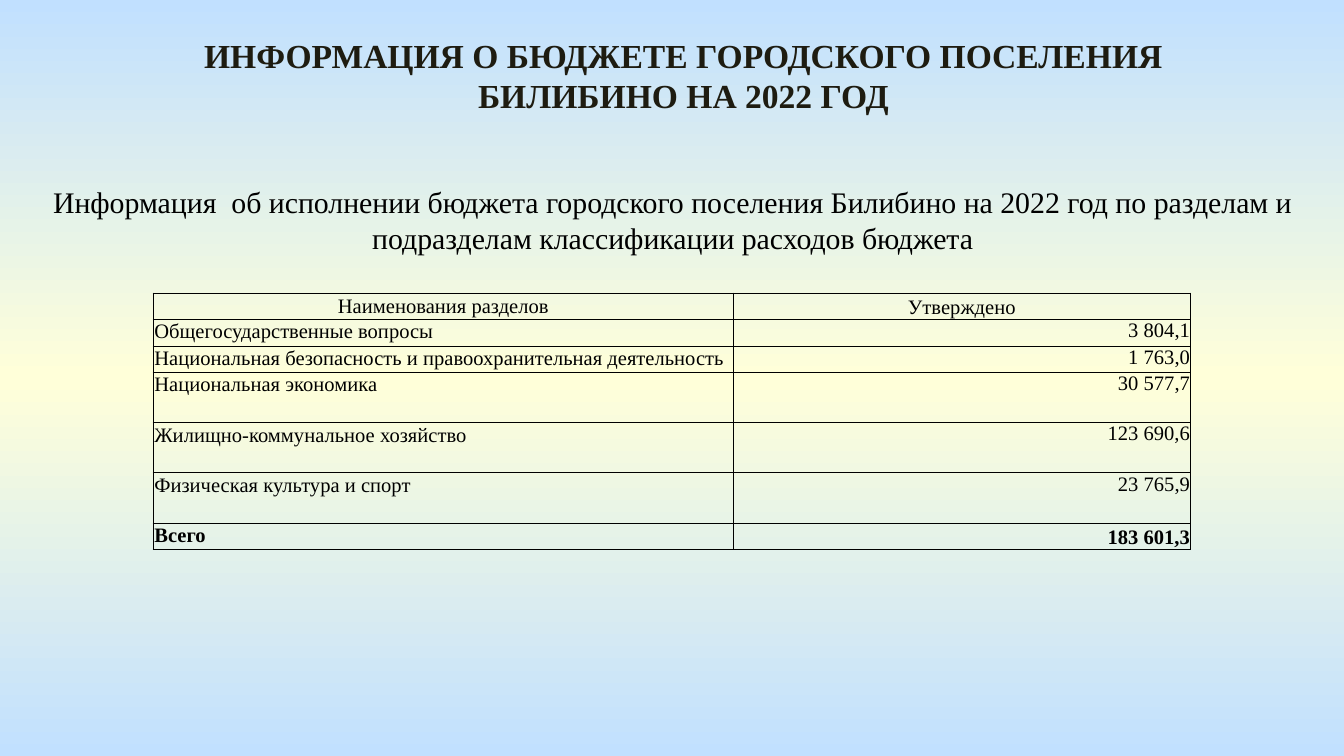
from copy import deepcopy

from lxml.etree import SubElement
from pptx import Presentation
from pptx.dml.color import RGBColor
from pptx.enum.text import MSO_ANCHOR, MSO_AUTO_SIZE, PP_ALIGN
from pptx.oxml.ns import qn
from pptx.util import Pt

COLORS = {
    "sky": "C1E0FF",
    "cream": "FFFFD9",
    "title": "1E1C11",
    "text": "000000",
    "border": "000000",
}
FONT = "Times New Roman"
TITLE = "ИНФОРМАЦИЯ О БЮДЖЕТЕ ГОРОДСКОГО ПОСЕЛЕНИЯ БИЛИБИНО НА 2022 ГОД"
SUBTITLE = (
    "Информация  об исполнении бюджета городского поселения Билибино на 2022 год "
    "по разделам и подразделам классификации расходов бюджета"
)
BUDGET_ROWS = [
    ("Наименования разделов", "Утверждено", 14),
    ("Общегосударственные вопросы", "3 804,1", 14.4),
    ("Национальная безопасность и правоохранительная деятельность", "1 763,0", 13.5),
    ("Национальная экономика", "30 577,7", 27),
    ("Жилищно-коммунальное хозяйство", "123 690,6", 27),
    ("Физическая культура и спорт", "23 765,9", 27),
    ("Всего", "183 601,3", 14),
]
NAME_SHARE = 0.56


def write_text(text_frame, text, size, color="text", bold=False, align=PP_ALIGN.CENTER):
    """Write one formatted paragraph into a text frame."""
    paragraph = text_frame.paragraphs[0]
    paragraph.alignment = align
    run = paragraph.add_run()
    run.text = text
    run.font.name = FONT
    run.font.size = Pt(size)
    run.font.bold = bold
    run.font.color.rgb = RGBColor.from_string(COLORS[color])


def paint_background(slide):
    """Fill the slide with a vertical sky, cream, sky gradient."""
    fill = slide.background.fill
    fill.gradient()
    fill.gradient_angle = 90
    stop_list = slide.element.find(".//" + qn("a:gsLst"))
    stop_list.insert(1, deepcopy(stop_list[0]))
    for stop, position, color in zip(fill.gradient_stops, (0, 0.5, 1), ("sky", "cream", "sky")):
        stop.position = position
        stop.color.rgb = RGBColor.from_string(COLORS[color])


def add_heading(slide, left, top, width, height, text, **text_format):
    """Add a wrapped, centred heading in the given box."""
    box = slide.shapes.add_textbox(Pt(left), Pt(top), Pt(width), Pt(height))
    box.text_frame.word_wrap = True
    box.text_frame.auto_size = MSO_AUTO_SIZE.SHAPE_TO_FIT_TEXT
    write_text(box.text_frame, text, **text_format)


def add_borders(cell):
    """Draw a thin line on all four sides of a cell."""
    properties = cell._tc.get_or_add_tcPr()
    for index, side in enumerate(("lnL", "lnR", "lnT", "lnB")):
        line = SubElement(properties, qn(f"a:{side}"), w=str(Pt(0.5)))
        fill = SubElement(line, qn("a:solidFill"))
        SubElement(fill, qn("a:srgbClr"), val=COLORS["border"])
        properties.insert(index, line)


def fill_cell(cell, text, inset, anchor, **text_format):
    """Set the text, margins, fill and borders of a table cell."""
    cell.margin_left = cell.margin_top = cell.margin_right = Pt(inset)
    cell.margin_bottom = Pt(0)
    cell.vertical_anchor = anchor
    cell.fill.background()
    add_borders(cell)
    write_text(cell.text_frame, text, size=11, **text_format)


def add_budget_table(slide, left, top, width):
    """Add the table of budget sections and approved amounts."""
    height = sum(row_height for _, _, row_height in BUDGET_ROWS)
    frame = slide.shapes.add_table(
        len(BUDGET_ROWS), 2, Pt(left), Pt(top), Pt(width), Pt(height)
    )
    table = frame.table
    table.first_row = table.horz_banding = False
    table.columns[0].width = Pt(width * NAME_SHARE)
    table.columns[1].width = Pt(width * (1 - NAME_SHARE))
    last = len(BUDGET_ROWS) - 1
    for index, (name, amount, row_height) in enumerate(BUDGET_ROWS):
        table.rows[index].height = Pt(row_height)
        header, total = index == 0, index == last
        fill_cell(
            table.cell(index, 0), name, inset=0.7, bold=total,
            anchor=MSO_ANCHOR.MIDDLE if header else MSO_ANCHOR.TOP,
            align=PP_ALIGN.CENTER if header else PP_ALIGN.LEFT,
        )
        fill_cell(
            table.cell(index, 1), amount, inset=0.7 if header else 0, bold=total,
            anchor=MSO_ANCHOR.BOTTOM if header or total else MSO_ANCHOR.TOP,
            align=PP_ALIGN.CENTER if header else PP_ALIGN.RIGHT,
        )


def main():
    """Build and save the budget slide."""
    presentation = Presentation()
    presentation.slide_width, presentation.slide_height = Pt(720), Pt(405)
    slide = presentation.slides.add_slide(presentation.slide_layouts[6])
    paint_background(slide)
    add_heading(slide, 88, 15, 556.5, 51, TITLE, size=18, color="title", bold=True)
    add_heading(slide, 0.5, 95, 720, 46, SUBTITLE, size=16)
    add_budget_table(slide, 82, 157, 555.5)
    presentation.save("out.pptx")


if __name__ == "__main__":
    main()
